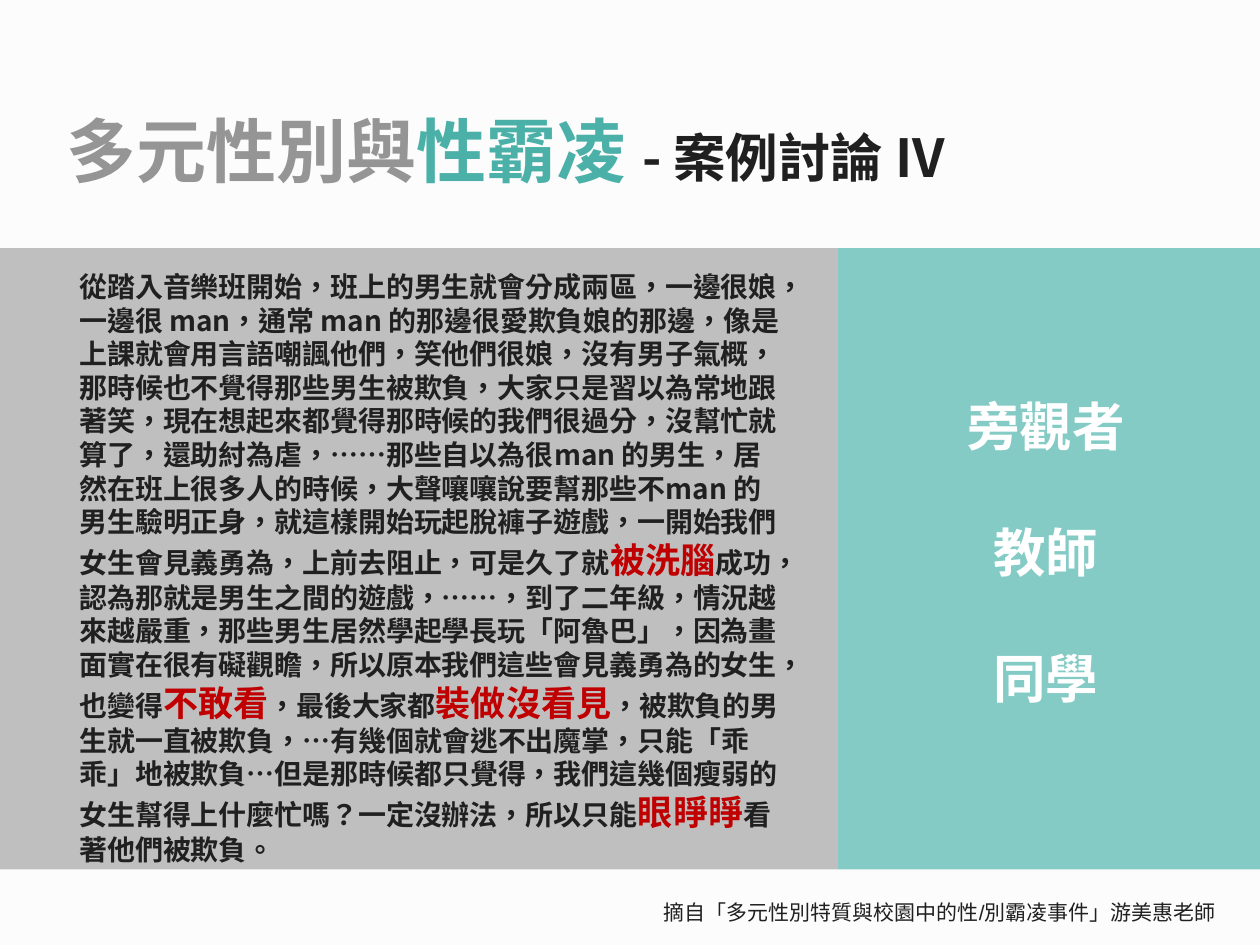
from dataclasses import dataclass

import pptx
import pptx.dml.color
import pptx.enum.shapes
import pptx.enum.text
import pptx.oxml
import pptx.util
from pptx.util import Inches

ALIGN = pptx.enum.text.PP_ALIGN
ANCHOR = pptx.enum.text.MSO_ANCHOR


@dataclass(frozen=True)
class Theme:
    background: str = "FCFCFC"
    teal_panel: str = "84CBC5"
    grey_panel: str = "BFBFBF"
    grey: str = "959595"
    teal: str = "4BB1A8"
    ink: str = "202020"
    alert: str = "C00000"
    white: str = "FFFFFF"
    heading_font: str = "Noto Sans CJK SC"
    source_font: str = "Arial"
    language: str = "zh-TW"
    title_size: int = 40
    subtitle_size: int = 30
    emphasis_size: int = 20
    story_size: int = 16
    source_size: int = 12


@dataclass(frozen=True)
class Box:
    left: float
    top: float
    width: float
    height: float

    def lengths(self) -> tuple:
        return tuple(Inches(v) for v in (self.left, self.top, self.width, self.height))


@dataclass(frozen=True)
class TextRun:
    text: str
    size: int
    color: str
    font: str
    bold: bool = True


THEME = Theme()


def rgb(color: str) -> pptx.dml.color.RGBColor:
    return pptx.dml.color.RGBColor.from_string(color)


def heading(text: str, size: int, color: str) -> TextRun:
    return TextRun(text, size, color, THEME.heading_font)


def story(text: str) -> TextRun:
    return heading(text, THEME.story_size, THEME.ink)


def emphasis(text: str) -> TextRun:
    return heading(text, THEME.emphasis_size, THEME.alert)


def add_panel(slide, box: Box, color: str) -> None:
    """Draw a plain rectangle behind the placeholders."""
    panel = slide.shapes.add_shape(pptx.enum.shapes.MSO_SHAPE.RECTANGLE, *box.lengths())
    panel.shadow.inherit = False
    panel.fill.solid()
    panel.fill.fore_color.rgb = rgb(color)
    panel.line.fill.background()
    slide.shapes._spTree.insert(2, panel._element)


def add_run(paragraph, item: TextRun) -> None:
    run = paragraph.add_run()
    run.text = item.text
    run.font.size = pptx.util.Pt(item.size)
    run.font.bold = item.bold
    run.font.name = item.font
    run.font.color.rgb = rgb(item.color)
    # Traditional Chinese sets the centred punctuation
    run.font._element.set("lang", THEME.language)
    east_asian = pptx.oxml.parse_xml(
        '<a:ea xmlns:a="http://schemas.openxmlformats.org/drawingml/2006/main" '
        f'typeface="{item.font}"/>'
    )
    run.font._element.find(pptx.oxml.ns.qn("a:latin")).addnext(east_asian)


def fill_text(shape, box: Box, paragraphs: list[list[TextRun]], align=ALIGN.LEFT,
              anchor=ANCHOR.TOP, gap: float = 0) -> None:
    """Place a text shape and fill it without bullets or indents."""
    shape.left, shape.top, shape.width, shape.height = box.lengths()
    frame = shape.text_frame
    frame.word_wrap = True
    frame.auto_size = pptx.enum.text.MSO_AUTO_SIZE.NONE
    frame.vertical_anchor = anchor
    for index, runs in enumerate(paragraphs):
        paragraph = frame.add_paragraph() if index else frame.paragraphs[0]
        paragraph.alignment = align
        paragraph.line_spacing = 1.0
        paragraph.space_before = pptx.util.Pt(gap if index else 0)
        properties = paragraph._p.get_or_add_pPr()
        properties.set("marL", "0")
        properties.set("indent", "0")
        properties.append(pptx.oxml.parse_xml(
            '<a:buNone xmlns:a="http://schemas.openxmlformats.org/drawingml/2006/main"/>'
        ))
        for item in runs:
            add_run(paragraph, item)


TITLE = [
    heading("多元性別與", THEME.title_size, THEME.grey),
    heading("性霸凌 ", THEME.title_size, THEME.teal),
    heading("- 案例討論 IV", THEME.subtitle_size, THEME.ink),
]
STORY = [
    story(
        "從踏入音樂班開始，班上的男生就會分成兩區，一邊很娘，一邊很 man，"
        "通常 man 的那邊很愛欺負娘的那邊，像是上課就會用言語嘲諷他們，"
        "笑他們很娘，沒有男子氣概，那時候也不覺得那些男生被欺負，"
        "大家只是習以為常地跟著笑，現在想起來都覺得那時候的我們很過分，"
        "沒幫忙就算了，還助紂為虐，⋯⋯那些自以為很man 的男生，"
        "居然在班上很多人的時候，大聲嚷嚷說要幫那些不man 的男生驗明正身，"
        "就這樣開始玩起脫褲子遊戲，一開始我們女生會見義勇為，"
        "上前去阻止，可是久了就"
    ),
    emphasis("被洗腦"),
    story(
        "成功，認為那就是男生之間的遊戲，⋯⋯，到了二年級，情況越來越嚴重，"
        "那些男生居然學起學長玩「阿魯巴」，因為畫面實在很有礙觀瞻，"
        "所以原本我們這些會見義勇為的女生，也變得"
    ),
    emphasis("不敢看"),
    story("，最後大家都"),
    emphasis("裝做沒看見"),
    story(
        "，被欺負的男生就一直被欺負，…有幾個就會逃不出魔掌，"
        "只能「乖乖」地被欺負…但是那時候都只覺得，"
        "我們這幾個瘦弱的女生幫得上什麼忙嗎？一定沒辦法，所以只能"
    ),
    emphasis("眼睜睜"),
    story("看著他們被欺負。"),
]
ROLES = ["旁觀者", "教師", "同學"]
SOURCE = TextRun("摘自「多元性別特質與校園中的性/別霸凌事件」游美惠老師",
                 THEME.source_size, THEME.ink, THEME.source_font, False)


def main() -> None:
    presentation = pptx.Presentation()
    presentation.slide_width = Inches(10)
    presentation.slide_height = Inches(7.5)
    slide = presentation.slides.add_slide(presentation.slide_layouts[3])
    slide.background.fill.solid()
    slide.background.fill.fore_color.rgb = rgb(THEME.background)

    # Side-by-side panels
    add_panel(slide, Box(0, 1.97, 6.65, 4.93), THEME.grey_panel)
    add_panel(slide, Box(6.65, 1.97, 3.35, 4.93), THEME.teal_panel)

    # Title, story and roles
    title, story_body, roles_body = slide.placeholders
    fill_text(title, Box(0.43, 0.76, 9, 0.85), [TITLE], anchor=ANCHOR.MIDDLE)
    fill_text(story_body, Box(0.53, 2.09, 5.83, 5.15), [STORY])
    roles = [[heading(role, THEME.subtitle_size, THEME.white)] for role in ROLES]
    fill_text(roles_body, Box(6.89, 3.67, 2.82, 1.41), roles, ALIGN.CENTER,
              ANCHOR.MIDDLE, gap=36)

    # Source line
    source_box = Box(5.17, 7.09, 4.8, 0.3)
    source = slide.shapes.add_textbox(*source_box.lengths())
    fill_text(source, source_box, [[SOURCE]])

    presentation.save("out.pptx")


if __name__ == "__main__":
    main()
